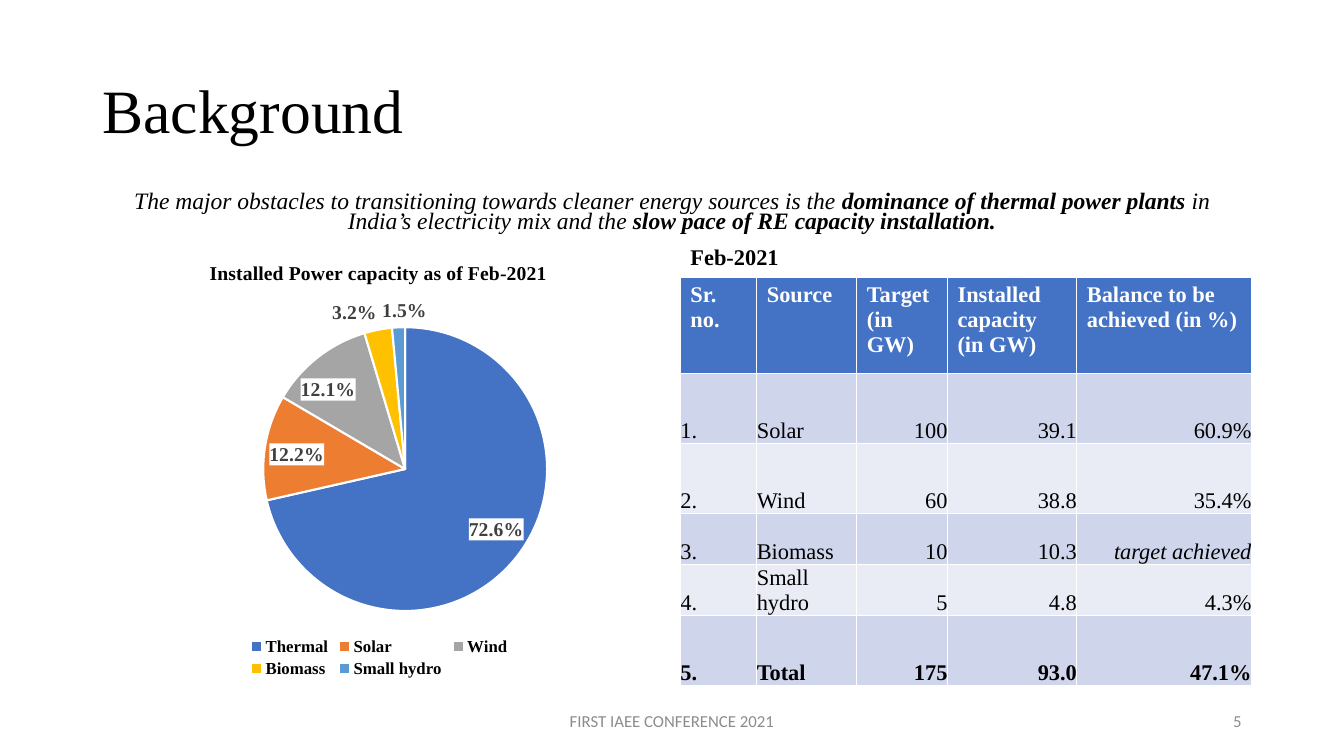
from lxml import etree
from pptx import Presentation
from pptx.chart.data import CategoryChartData
from pptx.dml.color import RGBColor
from pptx.enum.chart import XL_CHART_TYPE, XL_LABEL_POSITION, XL_LEGEND_POSITION
from pptx.enum.text import MSO_ANCHOR, MSO_AUTO_SIZE, PP_ALIGN
from pptx.util import Inches, Pt

LEFT, CENTER, RIGHT = PP_ALIGN.LEFT, PP_ALIGN.CENTER, PP_ALIGN.RIGHT
MIDDLE, BOTTOM = MSO_ANCHOR.MIDDLE, MSO_ANCHOR.BOTTOM
NO_FIT = MSO_AUTO_SIZE.NONE
PIE = XL_CHART_TYPE.PIE
BEST_FIT = XL_LABEL_POSITION.BEST_FIT
LEGEND_BOTTOM = XL_LEGEND_POSITION.BOTTOM

BLACK = RGBColor(0x00, 0x00, 0x00)
WHITE = RGBColor(0xFF, 0xFF, 0xFF)
GREY = RGBColor(0x8C, 0x8C, 0x8C)
LABEL_GREY = RGBColor(0x40, 0x40, 0x40)
BLUE = RGBColor(0x44, 0x72, 0xC4)
ORANGE = RGBColor(0xED, 0x7D, 0x31)
SILVER = RGBColor(0xA5, 0xA5, 0xA5)
GOLD = RGBColor(0xFF, 0xC0, 0x00)
SKY = RGBColor(0x5B, 0x9B, 0xD5)
BAND_DARK = RGBColor(0xCF, 0xD5, 0xEA)
BAND_LIGHT = RGBColor(0xE9, 0xEB, 0xF5)

SERIF, SANS = "Times New Roman", "Calibri"
COLUMNS, ROWS = 160, 90  # grid over the whole slide
COMPARISON_LAYOUT = 4
CHART_NS = "http://schemas.openxmlformats.org/drawingml/2006/chart"
DRAWING_NS = "http://schemas.openxmlformats.org/drawingml/2006/main"

CAPACITY_SHARES = [
    ("Thermal", 0.726, BLUE), ("Solar", 0.122, ORANGE), ("Wind", 0.121, SILVER),
    ("Biomass", 0.032, GOLD), ("Small hydro", 0.015, SKY),
]
TARGETS = [
    ("Sr. no.", "Source", "Target (in GW)", "Installed capacity (in GW)",
     "Balance to be achieved (in %)"),
    ("1.", "Solar", "100", "39.1", "60.9%"),
    ("2.", "Wind", "60", "38.8", "35.4%"),
    ("3.", "Biomass", "10", "10.3", "target achieved"),
    ("4.", "Small hydro", "5", "4.8", "4.3%"),
    ("5.", "Total", "175", "93.0", "47.1%"),
]
TARGET_WIDTHS = (9.1, 11.9, 10.8, 15.4, 20.8)   # grid columns
TARGET_HEIGHTS = (11.5, 8.3, 8.3, 6.1, 6.1, 8.3)  # grid rows


class SlideBuilder:
    def __init__(self, deck, layout):
        self.slide = deck.slides.add_slide(deck.slide_layouts[layout])
        self.column = deck.slide_width / COLUMNS
        self.row = deck.slide_height / ROWS

    def box(self, left, top, width, height):
        return (round(left * self.column), round(top * self.row),
                round(width * self.column), round(height * self.row))

    def style(self, font, size, color=BLACK, bold=False, italic=False, face=SERIF):
        font.name, font.size, font.bold, font.italic = face, Pt(size), bold, italic
        font.color.rgb = color

    def set_text(self, shape, runs, size, anchor, align=LEFT, spacing=1.0, before=0,
                 **look):
        """Fill one paragraph; runs are (text, bold) pairs."""
        frame = shape.text_frame
        frame.word_wrap, frame.auto_size = True, NO_FIT
        frame.vertical_anchor = anchor
        paragraph = frame.paragraphs[0]
        paragraph.alignment, paragraph.line_spacing = align, spacing
        paragraph.space_before = Pt(before)
        self.style(paragraph.font, size, **look)
        for text, bold in runs:
            run = paragraph.add_run()
            run.text, run.font.bold = text, bold

    def placeholder(self, index, area, runs, size, anchor, **look):
        shape = self.slide.placeholders[index]
        shape.left, shape.top, shape.width, shape.height = self.box(*area)
        self.set_text(shape, runs, size, anchor, **look)

    def footer(self, area, text, align):
        shape = self.slide.shapes.add_textbox(*self.box(*area))
        self.set_text(shape, [(text, False)], 12, MIDDLE, align=align, color=GREY,
                      face=SANS)

    def drop_placeholders(self, *indexes):
        for index in indexes:
            element = self.slide.placeholders[index].element
            element.getparent().remove(element)

    def place_in_chart(self, parent, position, inner=False):
        """Set a manual layout, in shares of the chart's size."""
        for old in parent.findall(f"{{{CHART_NS}}}layout"):
            parent.remove(old)
        layout = etree.Element(f"{{{CHART_NS}}}layout")
        manual = etree.SubElement(layout, f"{{{CHART_NS}}}manualLayout")
        settings = [("layoutTarget", "inner")] if inner else []
        settings += [("xMode", "edge"), ("yMode", "edge"), *zip("xywh", position)]
        for tag, value in settings:
            etree.SubElement(manual, f"{{{CHART_NS}}}{tag}").set("val", str(value))
        parent.insert(0 if inner else 1, layout)

    def pie(self, area, title, shares):
        data = CategoryChartData(number_format="0.0%")
        data.categories = [name for name, _, _ in shares]
        data.add_series("Series 1", [value for _, value, _ in shares])
        chart = self.slide.shapes.add_chart(PIE, *self.box(*area), data).chart
        self.style(chart.font, 10, face=SANS)

        chart.has_title = True
        heading = chart.chart_title.text_frame.paragraphs[0]
        heading.add_run().text = title
        self.style(heading.font, 14, bold=True)
        chart.chart_title.include_in_layout = False
        self.place_in_chart(chart.chart_title._element, (0.2, 0.04))

        chart.has_legend = True
        chart.legend.position = LEGEND_BOTTOM
        chart.legend.include_in_layout = False
        self.style(chart.legend.font, 12, bold=True)
        self.place_in_chart(chart.legend._element, (0.27, 0.89, 0.47, 0.11))

        plot = chart.plots[0]
        plot.vary_by_categories = True
        self.place_in_chart(plot._element.getparent(), (0.3, 0.2, 0.5, 0.64), inner=True)
        for index, (_, _, color) in enumerate(shares):
            slice_format = plot.series[0].points[index].format
            slice_format.fill.solid()
            slice_format.fill.fore_color.rgb = color
            slice_format.line.color.rgb = WHITE
            slice_format.line.width = Pt(1.5)

        labels = plot.series[0].data_labels
        self.style(labels.font, 14, color=LABEL_GREY, bold=True)
        labels.number_format, labels.number_format_is_linked = "0.0%", False
        labels.show_value, labels.position = True, BEST_FIT
        # White plate behind each value
        plate = etree.Element(f"{{{CHART_NS}}}spPr")
        fill = etree.SubElement(plate, f"{{{DRAWING_NS}}}solidFill")
        etree.SubElement(fill, f"{{{DRAWING_NS}}}srgbClr").set("val", str(WHITE))
        labels._element.find(f"{{{CHART_NS}}}txPr").addprevious(plate)

    def table(self, area, rows, widths, heights):
        frame = self.slide.shapes.add_table(len(rows), len(widths), *self.box(*area))
        table = frame.table
        for column, width in zip(table.columns, widths):
            column.width = round(width * self.column)
        for row, height in zip(table.rows, heights):
            row.height = round(height * self.row)
        for r, values in enumerate(rows):
            header, total = r == 0, r == len(rows) - 1
            for c, text in enumerate(values):
                cell = table.cell(r, c)
                cell.text = text
                cell.fill.solid()
                cell.fill.fore_color.rgb = (
                    BLUE if header else BAND_DARK if r % 2 else BAND_LIGHT)
                paragraph = cell.text_frame.paragraphs[0]
                self.style(paragraph.font, 16, color=WHITE if header else BLACK,
                           bold=header or total, italic=text == "target achieved")
                if not header:
                    cell.vertical_anchor = BOTTOM
                    cell.margin_left = cell.margin_right = 0
                    cell.margin_top = cell.margin_bottom = 0
                    paragraph.alignment = RIGHT if c > 1 else LEFT


def main():
    deck = Presentation()
    deck.slide_width, deck.slide_height = Inches(13.33), Inches(7.5)
    page = SlideBuilder(deck, COMPARISON_LAYOUT)

    # Title and key message
    page.placeholder(0, (11, 4.8, 138, 17.4), [("Background", False)], 44, MIDDLE,
                     spacing=0.9)
    page.placeholder(1, (11, 22.1, 138, 6.3), [
        ("The major obstacles to transitioning towards cleaner energy sources is the ", False),
        ("dominance of thermal power plants ", True),
        ("in India’s electricity mix and the ", False),
        ("slow pace of RE capacity installation.", True),
    ], 16.8, BOTTOM, align=CENTER, spacing=0.7, before=10, italic=True)

    # Capacity mix
    page.pie((11, 28.4, 67.7, 52.8), "Installed Power capacity as of Feb-2021",
             CAPACITY_SHARES)

    # Renewable targets
    page.placeholder(3, (81, 28.4, 68, 4.4), [("Feb-2021", True)], 16, BOTTOM,
                     spacing=0.9, before=10)
    page.table((81, 33, sum(TARGET_WIDTHS), sum(TARGET_HEIGHTS)), TARGETS,
               TARGET_WIDTHS, TARGET_HEIGHTS)
    page.drop_placeholders(2, 4)

    # Footer
    page.footer((53, 83.4, 54, 4.8), "FIRST IAEE CONFERENCE 2021", CENTER)
    page.footer((113, 83.4, 36, 4.8), "5", RIGHT)

    deck.save("out.pptx")


if __name__ == "__main__":
    main()
